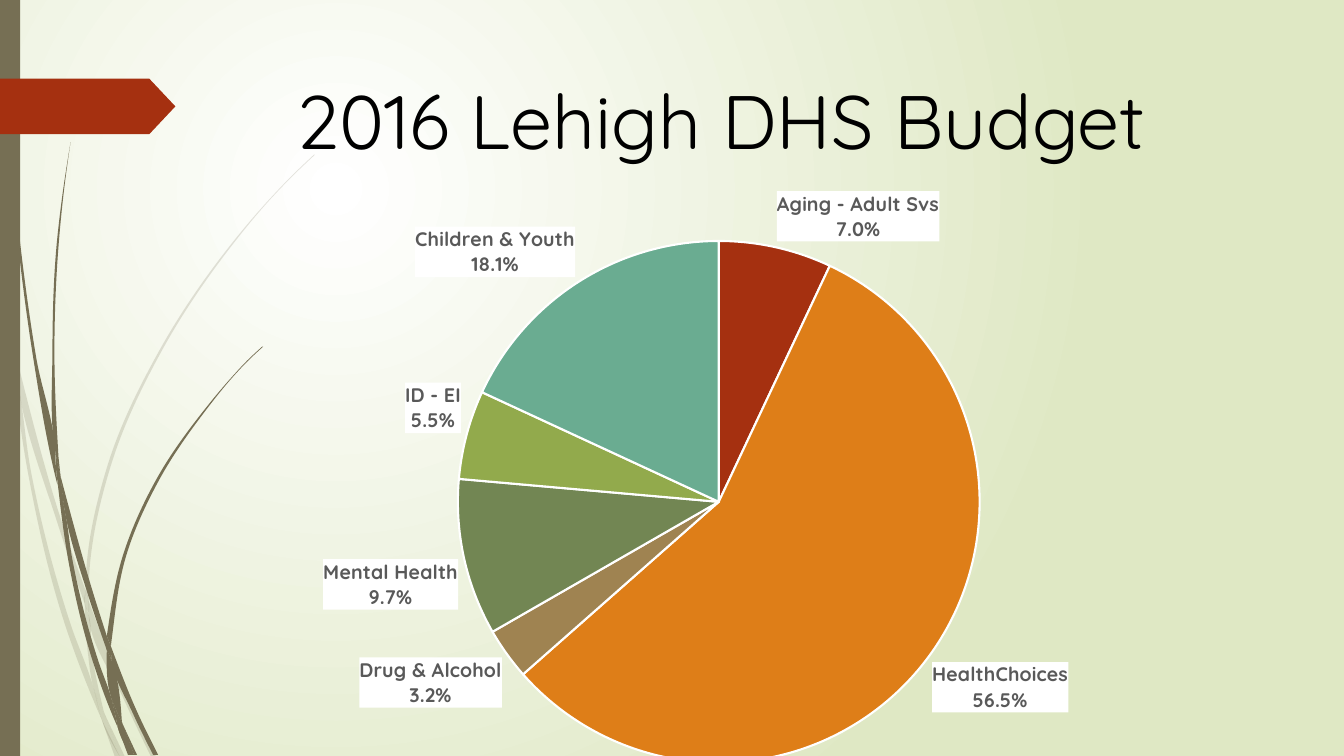
import lxml.etree
import pptx
import pptx.chart.data
import pptx.dml.color
import pptx.enum.chart
import pptx.enum.shapes
import pptx.enum.text
import pptx.oxml
import pptx.oxml.ns
import pptx.util

Pt = pptx.util.Pt
qn = pptx.oxml.ns.qn

FONT = "Quicksand"
COLOURS = {
    "white": "FFFFFF", "mist": "DFE8C4", "stem": "766F54", "red": "A53010",
    "orange": "DE7E18", "tan": "9F8351", "moss": "728653", "lime": "92AA4C",
    "teal": "6AAC91", "label": "595959", "black": "000000",
}
BUDGET = [
    ("Aging - Adult Svs", 7, "red"),
    ("HealthChoices", 56.5, "orange"),
    ("Drug & Alcohol", 3.2, "tan"),
    ("Mental Health", 9.7, "moss"),
    ("ID - EI", 5.5, "lime"),
    ("Children & Youth", 18.1, "teal"),
]

# Each blade of grass has an outward and a return edge, on a grid of 0.72 pt
GRID = 0.72
PALE_BLADES = [
    ([(11, 350), (9, 322), (0, 282)], [(0, 299), (10, 344), (11, 350)]),
    ([(14, 345), (17, 376), (58, 522), (84, 599)], [(85, 586), (62, 520), (14, 345)]),
    ([(88, 596), (88, 610), (123, 694), (150, 751)],
     [(155, 751), (127, 692), (92, 607), (88, 596)]),
    ([(105, 711), (119, 751)], [(124, 751), (105, 711)]),
    ([(11, 350), (28, 470), (65, 621), (92, 693), (101, 714)],
     [(99, 707), (93, 683), (70, 619), (31, 469), (17, 376), (11, 350)]),
    ([(84, 599), (87, 646), (93, 683), (96, 692), (105, 711)],
     [(103, 706), (91, 646), (88, 610), (84, 599)]),
    ([(85, 586), (85, 584), (107, 461), (158, 348), (228, 244), (268, 197), (289, 175),
      (312, 153)],
     [(312, 154), (290, 175), (268, 198), (229, 245), (160, 349), (110, 462),
      (88, 584), (88, 596)]),
    ([(101, 714), (114, 751)], [(119, 751), (101, 714)]),
    ([(85, 586), (84, 599), (88, 608)], [(88, 610), (88, 596), (85, 586)]),
    ([(93, 683), (99, 707), (101, 714), (119, 751)], [(105, 711), (96, 692), (93, 683)]),
]
DARK_BLADES = [
    ([(3, 0), (4, 48), (7, 110), (17, 233), (33, 355), (56, 477), (57, 481)],
     [(55, 457), (55, 453), (36, 355), (19, 232), (8, 109), (5, 48), (4, 0)]),
    ([(60, 472), (64, 505), (88, 592), (106, 645)], [(106, 631), (93, 590), (60, 472)]),
    ([(110, 641), (111, 656), (132, 708), (152, 749)],
     [(157, 749), (136, 706), (113, 649), (110, 641)]),
    ([(57, 477), (68, 557), (93, 659), (111, 708), (117, 722)],
     [(116, 717), (110, 691), (98, 657), (72, 556), (64, 505), (57, 477)]),
    ([(70, 141), (62, 193), (56, 245), (52, 349), (55, 449), (60, 472)],
     [(58, 453), (54, 349), (58, 245), (63, 193), (70, 141)]),
    ([(122, 719), (133, 749)], [(136, 749), (122, 719)]),
    ([(55, 449), (57, 477), (64, 505)], [(60, 472), (55, 449)]),
    ([(106, 631), (122, 551), (156, 474), (204, 405), (231, 373), (245, 358), (260, 344)],
     [(261, 344), (245, 359), (231, 374), (205, 406), (158, 476), (125, 552),
      (111, 633), (110, 641)]),
    ([(117, 722), (127, 749)], [(131, 749), (117, 722)]),
    ([(106, 645), (110, 691), (116, 706), (122, 719)],
     [(121, 716), (111, 656), (109, 651), (106, 645)]),
    ([(106, 631), (106, 645), (109, 651), (111, 656)], [(110, 641), (106, 631)]),
    ([(110, 691), (116, 717), (117, 722), (130, 749)],
     [(133, 749), (122, 719), (116, 706), (110, 691)]),
]


def rgb(name):
    return pptx.dml.color.RGBColor.from_string(COLOURS[name])


def format_font(font, size, colour, bold=False):
    font.name, font.size, font.bold = FONT, Pt(size), bold
    font.color.rgb = rgb(colour)


def write_text(shape, text, size, colour, bold=False):
    frame = shape.text_frame
    frame.word_wrap = True
    frame.vertical_anchor = pptx.enum.text.MSO_ANCHOR.TOP
    para = frame.paragraphs[0]
    para.alignment = pptx.enum.text.PP_ALIGN.LEFT
    span = para.add_run()
    span.text = text
    format_font(span.font, size, colour, bold)


def paint(shape, colour, opacity=100):
    shape.shadow.inherit = False
    shape.line.fill.background()
    shape.fill.solid()
    shape.fill.fore_color.rgb = rgb(colour)
    if opacity < 100:
        tone = shape.element.spPr.find(".//" + qn("a:srgbClr"))
        lxml.etree.SubElement(tone, qn("a:alpha"), val=str(opacity * 1000))


def curve_edge(knots):
    """Give the cubic pieces (two handles and an end) of a smooth line through the knots."""
    steps = [end - start for start, end in zip(knots, knots[1:])]
    pace = [step / abs(step) for step in steps]
    slopes = [(pace[i] * abs(steps[i + 1]) + pace[i + 1] * abs(steps[i]))
              / (abs(steps[i]) + abs(steps[i + 1])) for i in range(len(steps) - 1)]
    first = (3 * pace[0] - slopes[0]) / 2 if slopes else pace[0]
    final = (3 * pace[-1] - slopes[-1]) / 2 if slopes else pace[-1]
    slopes = [first, *slopes, final]
    return [(knots[i] + slopes[i] * abs(step) / 3,
             knots[i + 1] - slopes[i + 1] * abs(step) / 3, knots[i + 1])
            for i, step in enumerate(steps)]


def draw_blade(page, left, top, edges, opacity):
    edges = [[complex(Pt(left + GRID * x), Pt(top + GRID * y)) for x, y in edge]
             for edge in edges]
    outline = [(knot.real, knot.imag) for edge in edges for knot in edge]
    builder = page.shapes.build_freeform(*outline[0])
    builder.add_line_segments(outline[1:], close=True)
    blade = builder.convert_to_shape()
    paint(blade, "stem", opacity)

    # Bend the straight sides; the one between the two edges stays straight
    corner = complex(blade.left, blade.top)
    pieces = curve_edge(edges[0]) + [None] + curve_edge(edges[1])
    for side, piece in zip(list(blade.element.iter(qn("a:lnTo"))), pieces):
        if piece:
            bend = lxml.etree.Element(qn("a:cubicBezTo"))
            for spot in piece:
                lxml.etree.SubElement(bend, qn("a:pt"), x=str(round((spot - corner).real)),
                                      y=str(round((spot - corner).imag)))
            side.getparent().replace(side, bend)


def draw_background(page):
    fill = page.background.fill
    fill.gradient()
    for stop, colour, position in zip(fill.gradient_stops, ("white", "mist"), (0, 1)):
        stop.color.rgb = rgb(colour)
        stop.position = position
    gradient = page.element.find(".//" + qn("a:gradFill"))
    gradient.remove(gradient.find(qn("a:lin")))
    glow = lxml.etree.SubElement(gradient, qn("a:path"), path="circle")
    lxml.etree.SubElement(glow, qn("a:fillToRect"),
                          l="50000", t="50000", r="100000", b="100000")


def draw_side(page, left, top, height):
    for blades, opacity in ((PALE_BLADES, 20), (DARK_BLADES, 100)):
        for edges in blades:
            draw_blade(page, left, top, edges, opacity)
    kinds = pptx.enum.shapes.MSO_SHAPE
    bar = page.shapes.add_shape(kinds.RECTANGLE, Pt(left), Pt(top), Pt(14.4), Pt(height))
    paint(bar, "stem")
    tag = page.shapes.add_shape(kinds.PENTAGON, Pt(left), Pt(top + 56.2), Pt(125.3), Pt(39.6))
    tag.adjustments[0] = 0.47
    paint(tag, "red")


def draw_title(page, left, top, width, height):
    title = page.shapes.title
    title.left, title.top, title.width, title.height = map(Pt, (left, top, width, height))
    write_text(title, "2016 Lehigh DHS Budget", size=54, colour="black")


def draw_budget(page, left, top, width, height):
    data = pptx.chart.data.CategoryChartData()
    data.categories = [name for name, share, colour in BUDGET]
    data.add_series("Series 1", [share for name, share, colour in BUDGET])
    chart = page.shapes.add_chart(pptx.enum.chart.XL_CHART_TYPE.PIE, Pt(left), Pt(top),
                                  Pt(width), Pt(height), data).chart
    chart.has_title = chart.has_legend = False
    format_font(chart.font, 10, "black")
    series = chart.plots[0].series[0]
    for i, (name, share, colour) in enumerate(BUDGET):
        slice_format = series.points[i].format
        slice_format.fill.solid()
        slice_format.fill.fore_color.rgb = rgb(colour)
        slice_format.line.color.rgb = rgb("white")
        slice_format.line.width = Pt(1.5)

    # Labels on white plates
    labels = series.data_labels
    labels.show_value = False
    labels.show_category_name = labels.show_percentage = True
    labels.number_format, labels.number_format_is_linked = "0.0%", False
    labels.position = pptx.enum.chart.XL_LABEL_POSITION.OUTSIDE_END
    format_font(labels.font, 14, "label", bold=True)
    node = series._element.find(qn("c:dLbls"))
    plate = lxml.etree.Element(qn("c:spPr"))
    solid = lxml.etree.SubElement(plate, qn("a:solidFill"))
    lxml.etree.SubElement(solid, qn("a:srgbClr"), val=COLOURS["white"])
    node.find(qn("c:numFmt")).addnext(plate)
    separator = lxml.etree.Element(qn("c:separator"))
    separator.text = "\n"
    node.find(qn("c:showBubbleSize")).addnext(separator)

    # Place of the pie, as shares of the chart box
    area = chart._chartSpace.find(".//" + qn("c:plotArea"))
    for old in area.findall(qn("c:layout")):
        area.remove(old)
    layout = lxml.etree.Element(qn("c:layout"))
    area.insert(0, layout)
    manual = lxml.etree.SubElement(layout, qn("c:manualLayout"))
    for key, value in (("layoutTarget", "inner"), ("xMode", "edge"), ("yMode", "edge"),
                       ("x", "0.286"), ("y", "0.11"), ("w", "0.447"), ("h", "0.863")):
        lxml.etree.SubElement(manual, qn("c:" + key), val=value)


def main():
    deck = pptx.Presentation()
    deck.slide_width, deck.slide_height = Pt(960), Pt(540)
    page = deck.slides.add_slide(deck.slide_layouts[5])
    draw_background(page)
    draw_side(page, 0, 0, 540)
    draw_title(page, 204.5, 49, 702, 100.8)
    draw_budget(page, 88.6, 124.6, 833.8, 432)
    deck.save("out.pptx")


if __name__ == "__main__":
    main()
